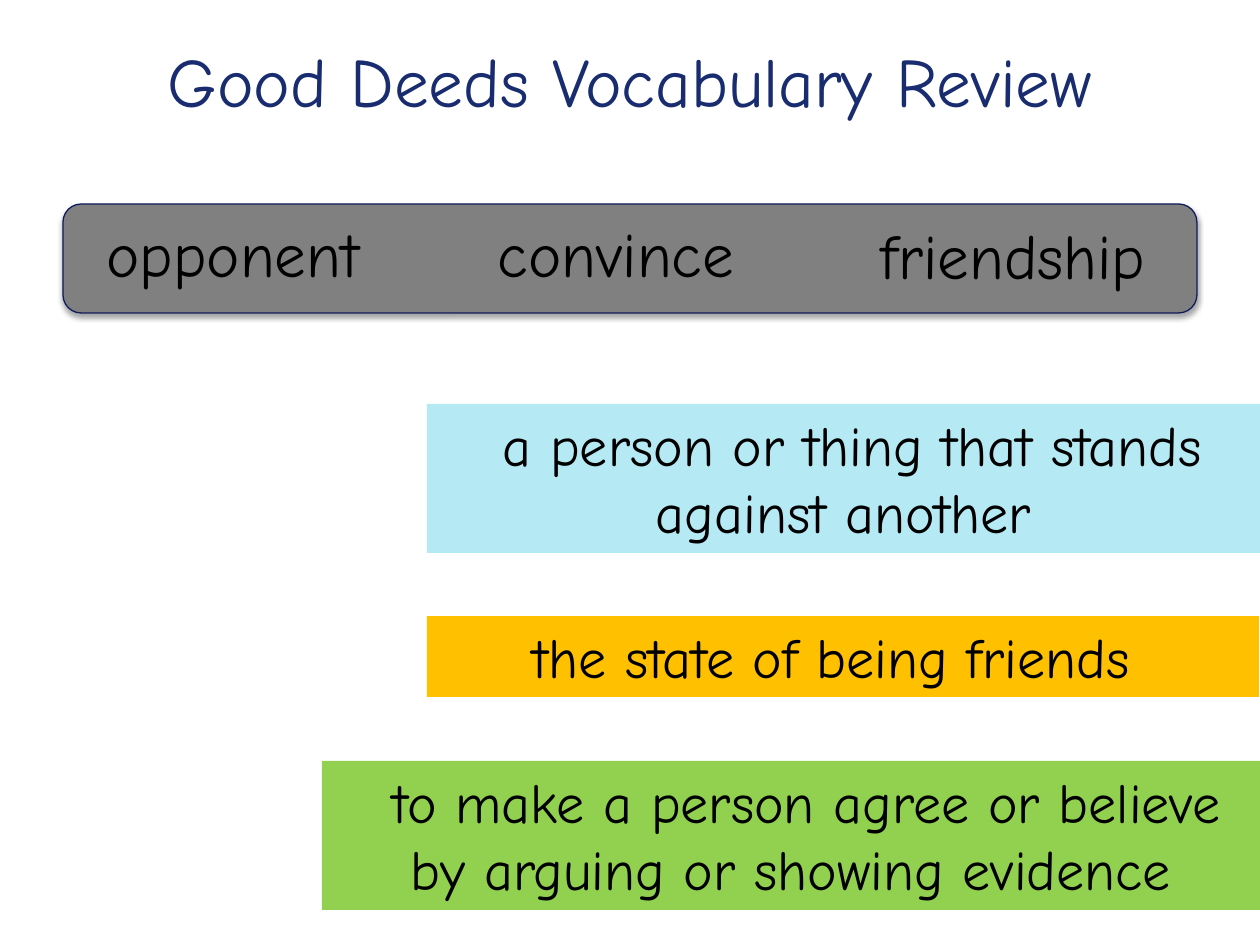
import pptx
import pptx.dml.color
import pptx.enum.shapes
import pptx.enum.text
import pptx.util
from lxml import etree

PX = 914400 / 126
KIND = pptx.enum.shapes.MSO_SHAPE
NS = "http://schemas.openxmlformats.org/drawingml/2006/main"


def paint(fmt, color):
    """Give a fill or a font colour a solid hex colour."""
    if hasattr(fmt, "solid"):
        fmt.solid()
        fmt = fmt.fore_color
    fmt.rgb = pptx.dml.color.RGBColor.from_string(color)


def write(shape, text, size, color="000000", indent=0, **insets):
    """Fill a shape with one centred paragraph; indent and insets are in px."""
    frame = shape.text_frame
    look = {"word_wrap": True,
            "vertical_anchor": pptx.enum.text.MSO_ANCHOR.TOP}
    for side, px in insets.items():
        look["margin_" + side] = round(px * PX)
    for name, value in look.items():
        setattr(frame, name, value)
    para = frame.paragraphs[0]
    para.alignment = pptx.enum.text.PP_ALIGN.CENTER
    if indent:
        para._p.get_or_add_pPr().set("indent", str(round(indent * PX)))
    run = para.add_run()
    run.text = text
    for name, value in {"name": "Comic Neue", "size": pptx.util.Pt(size)}.items():
        setattr(run.font, name, value)
    paint(run.font.color, color)


deck = pptx.Presentation()
deck.slide_width = pptx.util.Inches(10)
deck.slide_height = pptx.util.Inches(7.5)
slide = deck.slides.add_slide(deck.slide_layouts[6])
shapes = slide.shapes

# Word bank with its soft shadow
bank = shapes.add_shape(KIND.ROUNDED_RECTANGLE,
                        *[round(v * PX) for v in (63, 204, 1134, 109)])
paint(bank.fill, "808080")
paint(bank.line.fill, "0F1C5C")
bank.line.width = pptx.util.Pt(0.75)
bank.shadow.inherit = False
glow = bank._element.spPr.find(f"{{{NS}}}effectLst")
glow.append(etree.fromstring(
    f'<a:outerShdw xmlns:a="{NS}" blurRad="40000" dist="23000" dir="5400000"'
    ' rotWithShape="0"><a:srgbClr val="000000"><a:alpha val="35000"/>'
    '</a:srgbClr></a:outerShdw>'))

title = shapes.add_textbox(*[round(v * PX) for v in (63, 38, 1134, 157)])
write(title, "Good Deeds Vocabulary Review", 39.6, "182C6F", top=0)

words = [("friendship", 824, 210), ("opponent", 44, 208), ("convince", 427, 208)]
for word, left, top in words:
    box = shapes.add_textbox(*[round(v * PX) for v in (left, top, 378, 89)])
    write(box, word, 36)

# Meanings: text, place, fill, and the shift of the text
cards = [
    ("the state of being friends", (427, 616, 832, 81), "FFC000", {"right": 36}),
    ("to make a person agree or believe by arguing or showing evidence",
     (322, 761, 938, 149), "92D050", {"indent": 32}),
    ("a person or thing that stands against another",
     (427, 404, 833, 149), "B5E9F4", {"indent": 18}),
]
for text, place, color, shift in cards:
    card = shapes.add_shape(KIND.RECTANGLE, *[round(v * PX) for v in place])
    card.shadow.inherit = False
    paint(card.fill, color)
    card.line.fill.background()
    write(card, text, 32, **shift)

deck.save("out.pptx")
